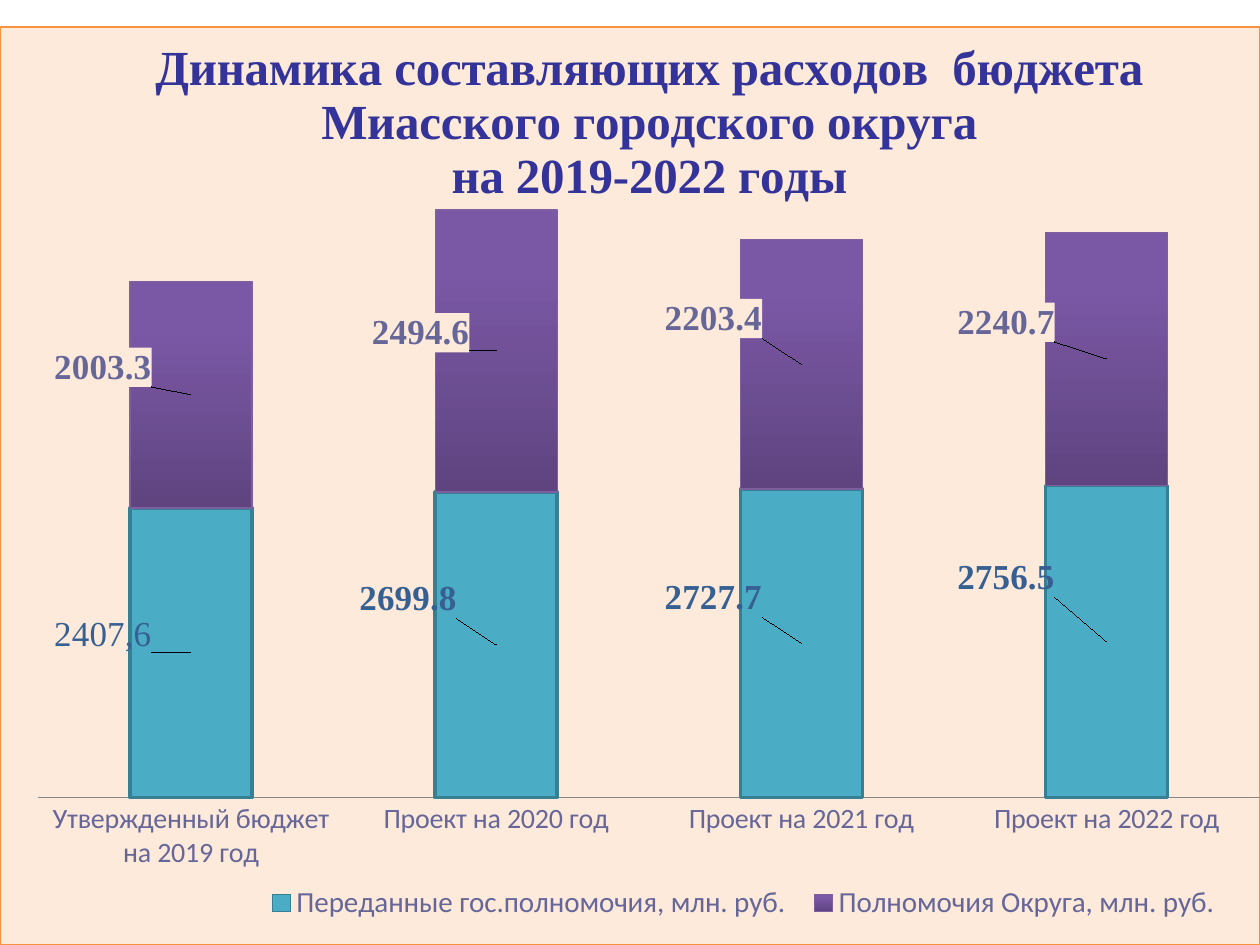
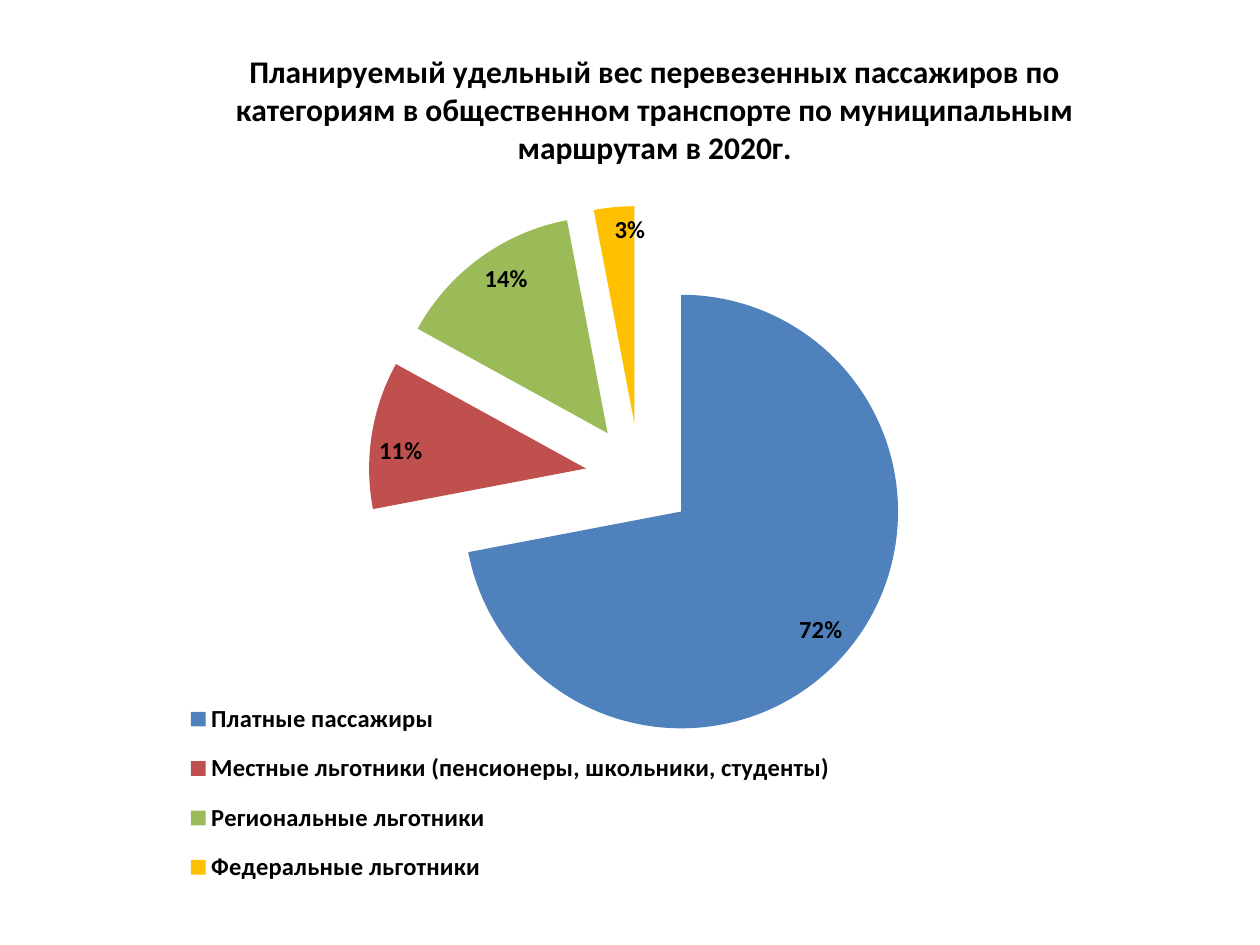
import pptx
import pptx.chart.data
import pptx.dml.color
import pptx.enum.chart
import pptx.oxml
import pptx.oxml.ns
import pptx.util

Inches, Pt = pptx.util.Inches, pptx.util.Pt
XL = pptx.enum.chart
NS = pptx.oxml.ns.nsdecls("c", "a")
SERIF, SANS = "Times New Roman", "Calibri"


def style(font, size, color, bold=False, name=SANS):
    font.size, font.bold, font.name = Pt(size), bold, name
    font.color.rgb = rgb(color)


def rgb(color):
    return pptx.dml.color.RGBColor.from_string(color)


def place(parent, index, *box, target="", edge=True):
    for old in parent.findall(pptx.oxml.ns.qn("c:layout")):
        parent.remove(old)
    modes = '<c:xMode val="edge"/><c:yMode val="edge"/>' if edge else ""
    sizes = "".join(f'<c:{key} val="{val}"/>' for key, val in zip("xywh", box))
    parent.insert(index, pptx.oxml.parse_xml(
        f"<c:layout {NS}><c:manualLayout>{target}{modes}{sizes}</c:manualLayout></c:layout>"))


prs = pptx.Presentation()
prs.slide_width, prs.slide_height = Inches(10), Inches(7.5)
INNER = '<c:layoutTarget val="inner"/>'
PANEL = "FDEADA"

pages = [
    dict(kind=XL.XL_CHART_TYPE.COLUMN_STACKED, at=(0, 0.21, 10, 7.29),
         cats=["Утвержденный бюджет на 2019 год", "Проект на 2020 год",
               "Проект на 2021 год", "Проект на 2022 год"],
         series={"Переданные гос.полномочия, млн. руб.": (2558.3, 2699.8, 2727.7, 2756.5),
                 "Полномочия Округа, млн. руб.": (2003.3, 2494.6, 2203.4, 2240.7)},
         title=["Динамика составляющих расходов  бюджета", "Миасского городского округа",
                "на 2019-2022 годы"],
         title_font=(28, "333399", True, SERIF), title_at=(0.12, 0.01),
         plot_at=(0.03, 0.1, 0.97, 0.74),
         legend=XL.XL_LEGEND_POSITION.BOTTOM, legend_font=(16.6, "666699"),
         legend_at=(0.2, 0.93, 0.78, 0.05)),
    dict(kind=XL.XL_CHART_TYPE.PIE, at=(0.67, 0.13, 8.9, 7.17),
         cats=["Платные пассажиры", "Местные льготники (пенсионеры, школьники, студенты)",
               "Региональные льготники", "Федеральные льготники"],
         series={"Series 1": (72, 11, 14, 3)},
         title=["Планируемый удельный вес перевезенных пассажиров по категориям "
                "в общественном транспорте по муниципальным маршрутам в 2020г."],
         title_font=(18, "000000", True), title_at=(0.13, 0.03),
         plot_at=(0.04, 0.21, 0.91, 0.6),
         legend=XL.XL_LEGEND_POSITION.RIGHT, legend_font=(14, "000000", True),
         legend_at=(0.08, 0.74, 0.6, 0.24)),
]

charts = []
for page in pages:
    s = prs.slides.add_slide(prs.slide_layouts[6])
    data = pptx.chart.data.CategoryChartData()
    data.categories = page["cats"]
    for name, vals in page["series"].items():
        data.add_series(name, vals)
    chart = s.shapes.add_chart(page["kind"], *map(Inches, page["at"]), data).chart
    style(chart.font, 10, "000000")
    chart.has_title = True
    tf = chart.chart_title.text_frame
    for i, line in enumerate(page["title"]):
        p = tf.add_paragraph() if i else tf.paragraphs[0]
        r = p.add_run()
        r.text = line
        style(r.font, *page["title_font"])
    place(chart.chart_title._element, 1, *page["title_at"])
    chart.has_legend = True
    chart.legend.position = page["legend"]
    chart.legend.include_in_layout = False
    style(chart.legend.font, *page["legend_font"])
    place(chart.legend._element, 1, *page["legend_at"])
    place(chart._chartSpace.chart.plotArea, 0, *page["plot_at"], target=INNER)
    charts.append(chart)

budget, riders = charts

budget._chartSpace.chart.addnext(pptx.oxml.parse_xml(
    f'<c:spPr {NS}><a:solidFill><a:srgbClr val="{PANEL}"/></a:solidFill>'
    '<a:ln w="9525"><a:solidFill><a:srgbClr val="F69240"/></a:solidFill></a:ln></c:spPr>'))
plot = budget.plots[0]
plot.gap_width, plot.overlap, plot.vary_by_categories = 150, 100, False
axis = budget.value_axis
axis.minimum_scale, axis.maximum_scale = 0, 6000
axis.has_major_gridlines = False
axis.visible = False
axis = budget.category_axis
axis.major_tick_mark = XL.XL_TICK_MARK.NONE
axis.format.line.color.rgb = rgb("868686")
style(axis.tick_labels.font, 16, "666699")

state, district = plot.series
state.format.fill.solid()
state.format.fill.fore_color.rgb = rgb("4BACC6")
fill = district.format.fill
fill.gradient()
fill.gradient_angle = 90
for stop, position, color in zip(fill.gradient_stops, (0, 0.8), ("5F4480", "7B58A6")):
    stop.position = position
    stop.color.rgb = rgb(color)

looks = [
    (state, "377F92", 2, "376092",
     [(-0.07, -0.02), (-0.07, -0.05), (-0.07, -0.05), (-0.08, -0.07)]),
    (district, "7D60A0", 0.75, "666699",
     [(-0.07, -0.03), (-0.06, -0.02), (-0.07, -0.05), (-0.08, -0.04)]),
]
for series, line, width, color, shifts in looks:
    series.format.line.color.rgb = rgb(line)
    series.format.line.width = Pt(width)
    labels = series.data_labels
    labels.show_value = True
    style(labels.font, 20, color, True, SERIF)
    for i, shift in enumerate(shifts):
        label = series.points[i].data_label
        if series is state and i == 0:
            r = label.text_frame.paragraphs[0].add_run()
            r.text = "2407,6"
            style(r.font, 20, color, False, SERIF)
        else:
            style(label.font, 20, color, True, SERIF)
        dLbl = label._get_or_add_dLbl()
        if series is district:
            dLbl.find(pptx.oxml.ns.qn("c:txPr")).addprevious(pptx.oxml.parse_xml(
                f'<c:spPr {NS}><a:solidFill><a:srgbClr val="{PANEL}"/></a:solidFill></c:spPr>'))
        place(dLbl, 1, *shift, edge=False)

pie = riders.plots[0].series[0]
for i, color in enumerate(("4F81BD", "C0504D", "9BBB59", "FFC000")):
    fill = pie.points[i].format.fill
    fill.solid()
    fill.fore_color.rgb = rgb(color)
pie._element.find(pptx.oxml.ns.qn("c:dPt")).addprevious(
    pptx.oxml.parse_xml(f'<c:explosion {NS} val="25"/>'))
labels = pie.data_labels
labels.show_percentage, labels.show_value = True, False
labels.number_format, labels.number_format_is_linked = "0%", False
labels.position = XL.XL_LABEL_POSITION.INSIDE_END
style(labels.font, 14, "000000", True)

prs.save("out.pptx")
